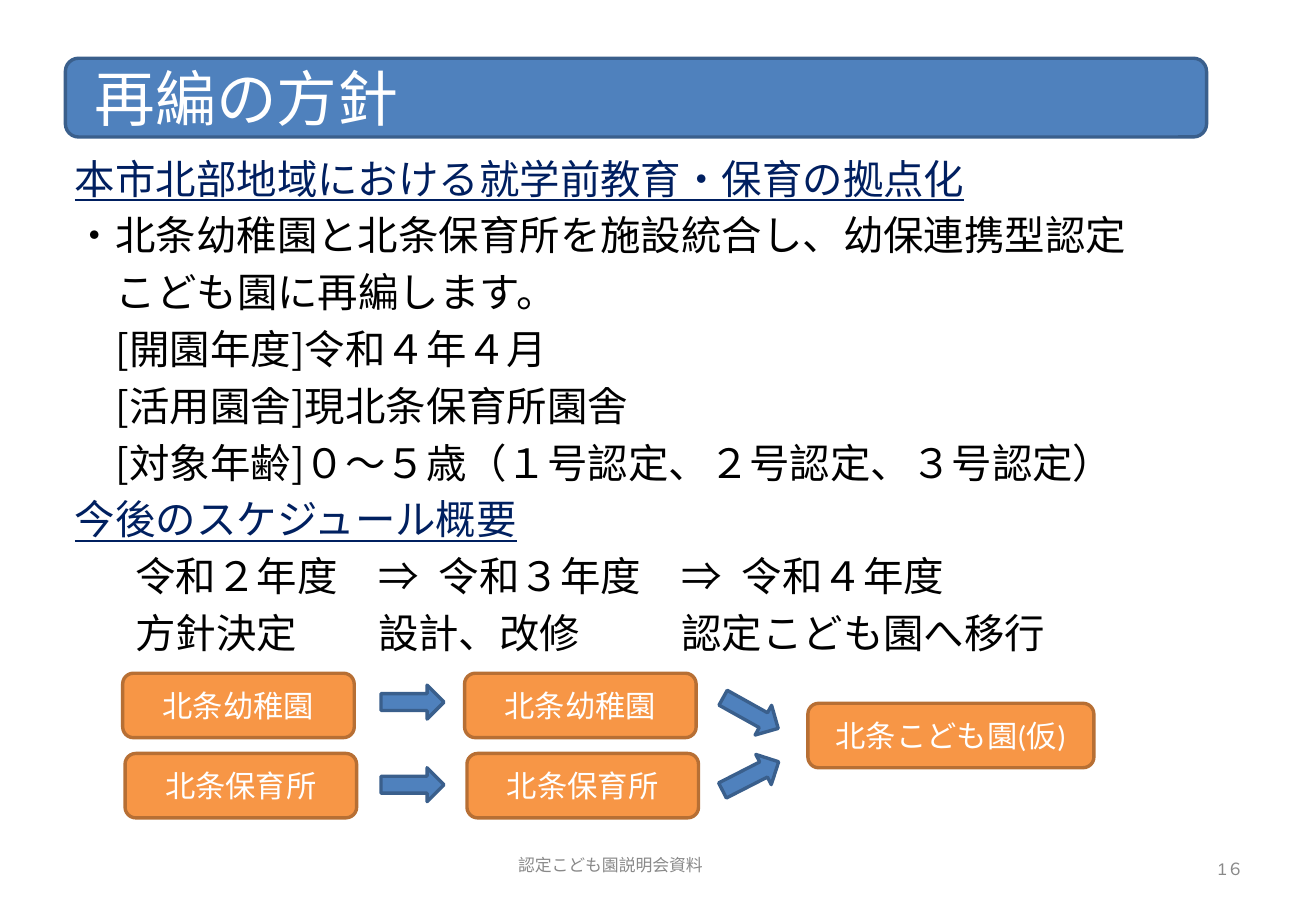
import pptx
import pptx.util
import pptx.dml.color
import pptx.enum.shapes
import pptx.enum.text
import pptx.oxml
import pptx.oxml.ns
from pptx.util import Cm

SHAPE = pptx.enum.shapes.MSO_SHAPE
ALIGN = pptx.enum.text.PP_ALIGN
GOTHIC = "Noto Sans CJK JP"
BLUE, BLUE_EDGE = "4F81BD", "3A5F8C"
ORANGE, ORANGE_EDGE = "F79646", "B76F34"


def set_text(p, text, size, font, color):
    p.text = text
    p.font.size = pptx.util.Pt(size)
    p.font.name = font
    p.font.color.rgb = pptx.dml.color.RGBColor.from_string(color)
    if font == GOTHIC:
        latin = p.font._element.find(pptx.oxml.ns.qn("a:latin"))
        latin.addnext(pptx.oxml.parse_xml(
            f'<a:ea {pptx.oxml.ns.nsdecls("a")} typeface="{font}"/>'))


def add_block(kind, x, y, w, h, fill, edge):
    s = prs.slides[0].shapes.add_shape(kind, Cm(x), Cm(y), Cm(w), Cm(h))
    s.shadow.inherit = False
    s.fill.solid()
    s.fill.fore_color.rgb = pptx.dml.color.RGBColor.from_string(fill)
    s.line.color.rgb = pptx.dml.color.RGBColor.from_string(edge)
    s.line.width = pptx.util.Pt(2)
    s.text_frame.vertical_anchor = pptx.enum.text.MSO_ANCHOR.MIDDLE
    return s


prs = pptx.Presentation()
prs.slide_width, prs.slide_height = Cm(27.56), Cm(19.1)
slide = prs.slides.add_slide(prs.slide_layouts[6])

# Title bar
s = add_block(SHAPE.ROUNDED_RECTANGLE, 1.37, 1.22, 23.9, 1.65, BLUE, BLUE_EDGE)
s.text_frame.margin_left = Cm(0.54)
p = s.text_frame.paragraphs[0]
set_text(p, "再編の方針", 36, "Calibri", "FFFFFF")
p.alignment = ALIGN.LEFT

# Body: indent is counted in full-width characters
EM = 0.855
body = [
    (0, "本市北部地域における就学前教育・保育の拠点化", "001F60"),
    (0, "・北条幼稚園と北条保育所を施設統合し、幼保連携型認定", "000000"),
    (1, "こども園に再編します。", "000000"),
    (1, "[開園年度]令和４年４月", "000000"),
    (1, "[活用園舎]現北条保育所園舎", "000000"),
    (1, "[対象年齢]０～５歳（１号認定、２号認定、３号認定）", "000000"),
    (0, "今後のスケジュール概要", "002060"),
    (0, "\t令和２年度\t⇒\t令和３年度\t⇒\t令和４年度", "000000"),
    (0, "\t方針決定\t\t設計、改修\t\t認定こども園へ移行", "000000"),
]
tab_stops = "".join(f'<a:tab pos="{Cm(EM * n)}" algn="l"/>' for n in (2, 8, 10, 16, 18))
tf = slide.shapes.add_textbox(Cm(1.57), Cm(3.22), Cm(24.66), Cm(10.7)).text_frame
tf.word_wrap = True
tf.margin_left = tf.margin_top = tf.margin_right = tf.margin_bottom = 0
for i, (indent, text, color) in enumerate(body):
    p = tf.add_paragraph() if i else tf.paragraphs[0]
    set_text(p, text, 24, GOTHIC, color)
    p.font.underline = color != "000000"
    p.line_spacing = pptx.util.Pt(28.8)
    p.space_after = pptx.util.Pt(4.9)
    pPr = p._p.get_or_add_pPr()
    pPr.set("marL", str(Cm(EM * indent)))
    pPr.set("indent", "0")
    if "\t" in text:
        pPr.find(pptx.oxml.ns.qn("a:defRPr")).addprevious(pptx.oxml.parse_xml(
            f'<a:tabLst {pptx.oxml.ns.nsdecls("a")}>{tab_stops}</a:tabLst>'))

# Facilities: two by two, then the merged one
facilities = [(2.57 + 7.16 * col + 0.05 * row, 14.1 + 1.68 * row, 4.85, name)
              for col in range(2)
              for row, name in enumerate(("北条幼稚園", "北条保育所"))]
facilities.append((16.92, 14.73, 5.99, "北条こども園(仮)"))
for x, y, w, name in facilities:
    s = add_block(SHAPE.ROUNDED_RECTANGLE, x, y, w, 1.35, ORANGE, ORANGE_EDGE)
    p = s.text_frame.paragraphs[0]
    set_text(p, name, 18, "Calibri", "FFFFFF")
    p.alignment = ALIGN.CENTER

# Arrows between the facilities
for x, y, angle in ((7.98, 14.35, 0), (7.98, 16.08, 0),
                    (15.06, 14.58, 29.1), (15.06, 15.9, 332.9)):
    s = add_block(SHAPE.RIGHT_ARROW, x, y, 1.32, 0.71, BLUE, BLUE_EDGE)
    s.rotation = angle

# Footer and page number
for x, y, w, text, font in ((10.85, 17.91, 5.82, "認定こども園説明会資料", GOTHIC),
                            (25.5, 17.98, 0.7, "1６", "Arial")):
    tf = slide.shapes.add_textbox(Cm(x), Cm(y), Cm(w), Cm(0.46)).text_frame
    tf.word_wrap = False
    tf.margin_left = tf.margin_top = tf.margin_right = tf.margin_bottom = 0
    set_text(tf.paragraphs[0], text, 10, font, "898989")
    tf.paragraphs[0].alignment = ALIGN.LEFT

prs.save("out.pptx")
